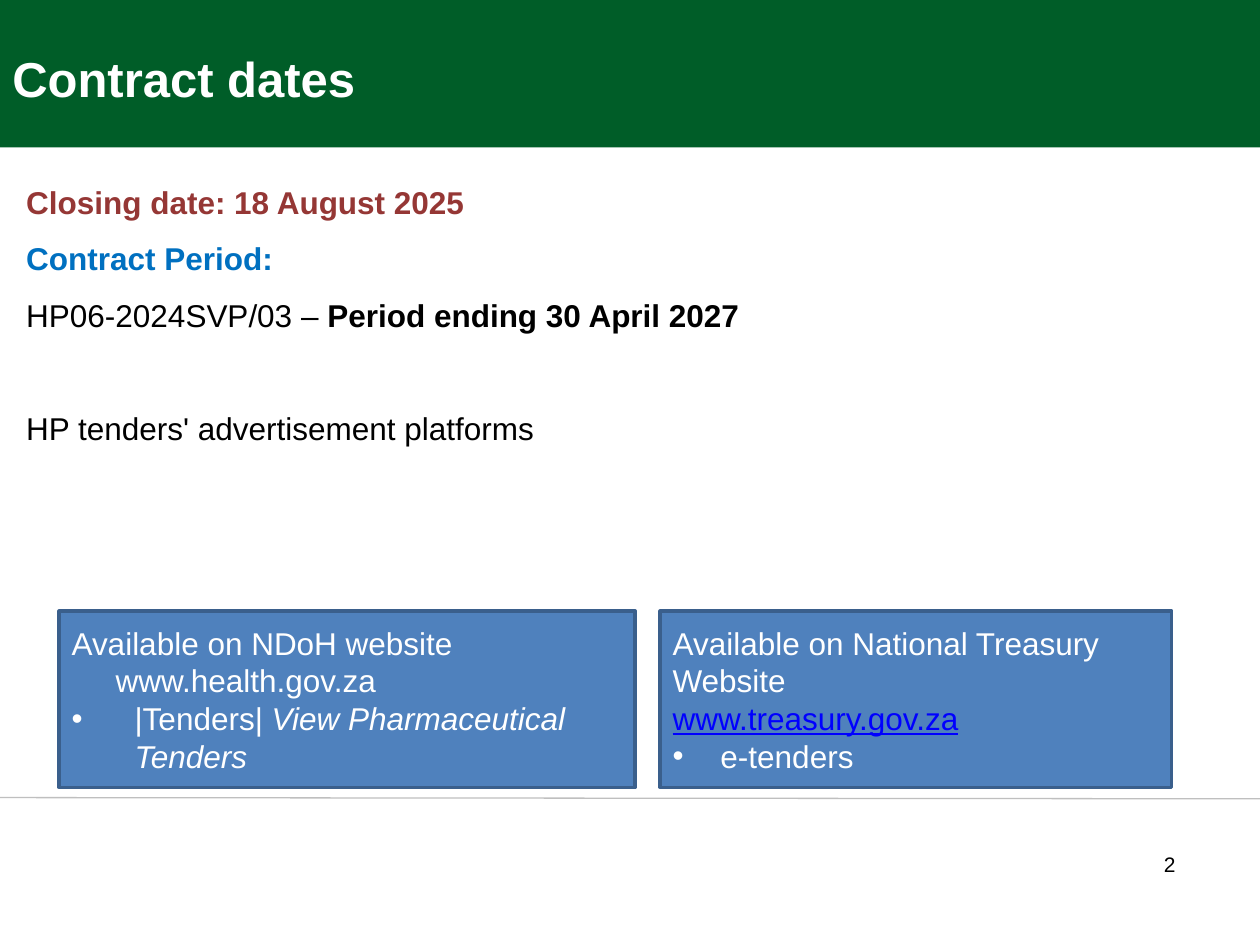
from dataclasses import dataclass

from lxml import etree
from pptx import Presentation
from pptx.dml.color import RGBColor
from pptx.enum.shapes import MSO_CONNECTOR, MSO_SHAPE
from pptx.enum.text import MSO_ANCHOR, PP_ALIGN
from pptx.oxml.ns import qn
from pptx.util import Inches, Pt

RECTANGLE = MSO_SHAPE.RECTANGLE
STRAIGHT = MSO_CONNECTOR.STRAIGHT
TOP, MIDDLE, BOTTOM = MSO_ANCHOR.TOP, MSO_ANCHOR.MIDDLE, MSO_ANCHOR.BOTTOM
LEFT, RIGHT = PP_ALIGN.LEFT, PP_ALIGN.RIGHT


@dataclass(frozen=True)
class Theme:
    font: str = "Arial"
    header: str = "005D28"
    rule: str = "BFBFBF"
    box: str = "4F81BD"
    box_line: str = "3A5F8C"
    white: str = "FFFFFF"
    black: str = "000000"
    closing: str = "953735"
    period: str = "0070C0"
    link: str = "0000FF"
    title_size: int = 28
    body_size: int = 18
    number_size: int = 12


class SlideBuilder:
    """Draws styled elements on the current slide."""

    def __init__(self, slide, theme):
        self.slide = slide
        self.theme = theme

    def rectangle(self, left, top, width, height, fill, line=None):
        shape = self.slide.shapes.add_shape(
            RECTANGLE, Inches(left), Inches(top), Inches(width), Inches(height))
        shape.shadow.inherit = False
        shape.fill.solid()
        shape.fill.fore_color.rgb = RGBColor.from_string(fill)
        if line:
            shape.line.color.rgb = RGBColor.from_string(line)
            shape.line.width = Pt(2)
        else:
            shape.line.fill.background()
        return shape

    def rule(self, start, end):
        connector = self.slide.shapes.add_connector(
            STRAIGHT, *(Inches(value) for value in start + end))
        connector.line.color.rgb = RGBColor.from_string(self.theme.rule)
        connector.line.width = Pt(0.75)
        etree.SubElement(connector._element.spPr, qn("a:effectLst"))

    def text_box(self, left, top, width, height, anchor=TOP):
        shape = self.slide.shapes.add_textbox(
            Inches(left), Inches(top), Inches(width), Inches(height))
        shape.text_frame.word_wrap = True
        shape.text_frame.vertical_anchor = anchor
        return shape.text_frame

    def paragraph(self, frame, runs, size, color, align=LEFT, spacing=None,
                  before=None, margin=0, bullet=False):
        paragraph = frame.paragraphs[0]
        if paragraph.runs:
            paragraph = frame.add_paragraph()
        paragraph.alignment = align
        if spacing:
            paragraph.line_spacing = spacing
        if before:
            paragraph.space_before = Pt(before)
        properties = paragraph._p.get_or_add_pPr()
        if margin:
            properties.set("marL", str(Inches(margin)))
        if bullet:
            properties.set("indent", str(-Inches(margin)))
            font = etree.SubElement(properties, qn("a:buFont"))
            font.set("typeface", self.theme.font)
            etree.SubElement(properties, qn("a:buChar")).set("char", "•")
        for text, *styles in runs:
            run = paragraph.add_run()
            run.text = text
            run.font.name = self.theme.font
            run.font.size = Pt(size)
            run.font.color.rgb = RGBColor.from_string(color)
            for style in styles:
                setattr(run.font, style, True)

    def platform_box(self, left, width, entries):
        theme = self.theme
        shape = self.rectangle(left, 4.85, width, 1.4, theme.box, theme.box_line)
        frame = shape.text_frame
        frame.word_wrap = True
        frame.vertical_anchor = MIDDLE
        for runs, color, margin, bullet in entries:
            self.paragraph(frame, runs, theme.body_size, color,
                           margin=margin, bullet=bullet)


def main():
    presentation = Presentation()
    presentation.slide_width = Inches(10)
    presentation.slide_height = Inches(7.5)
    theme = Theme()
    slide = presentation.slides.add_slide(presentation.slide_layouts[6])
    builder = SlideBuilder(slide, theme)

    builder.rectangle(0, 0, 10, 1.17, theme.header)
    builder.rule((0, 6.33), (10, 6.34))

    body = builder.text_box(0.11, 1.25, 9.79, 2.78)
    body_lines = [
        ([("Closing date: 18 August 2025", "bold")], theme.closing, None),
        ([("Contract Period:", "bold")], theme.period, None),
        ([("HP06-2024SVP/03 – ",), ("Period ending 30 April 2027", "bold")],
         theme.black, None),
        ([("HP tenders' advertisement platforms",)], theme.black, 32),
    ]
    for runs, color, before in body_lines:
        builder.paragraph(body, runs, theme.body_size, color,
                          spacing=1.5, before=before)

    number = builder.text_box(1, 6.25, 8.57, 1.25, MIDDLE)
    number.margin_right = Inches(0.24)
    number.margin_bottom = Inches(0.09)
    builder.paragraph(number, [("2",)], theme.number_size, theme.black, RIGHT)

    title = builder.text_box(0, -0.18, 6.08, 1.08, BOTTOM)
    builder.paragraph(title, [("Contract dates", "bold")],
                      theme.title_size, theme.white)

    builder.platform_box(0.47, 4.57, [
        ([("Available on NDoH website",)], theme.white, 0, False),
        ([("www.health.gov.za",)], theme.white, 0.35, False),
        ([("|Tenders| ",), ("View Pharmaceutical Tenders", "italic")],
         theme.white, 0.5, True),
    ])
    builder.platform_box(5.24, 4.06, [
        ([("Available on National Treasury Website",)], theme.white, 0, False),
        ([("www.treasury.gov.za", "underline")], theme.link, 0, False),
        ([("e-tenders",)], theme.white, 0.38, True),
    ])

    presentation.save("out.pptx")


if __name__ == "__main__":
    main()
